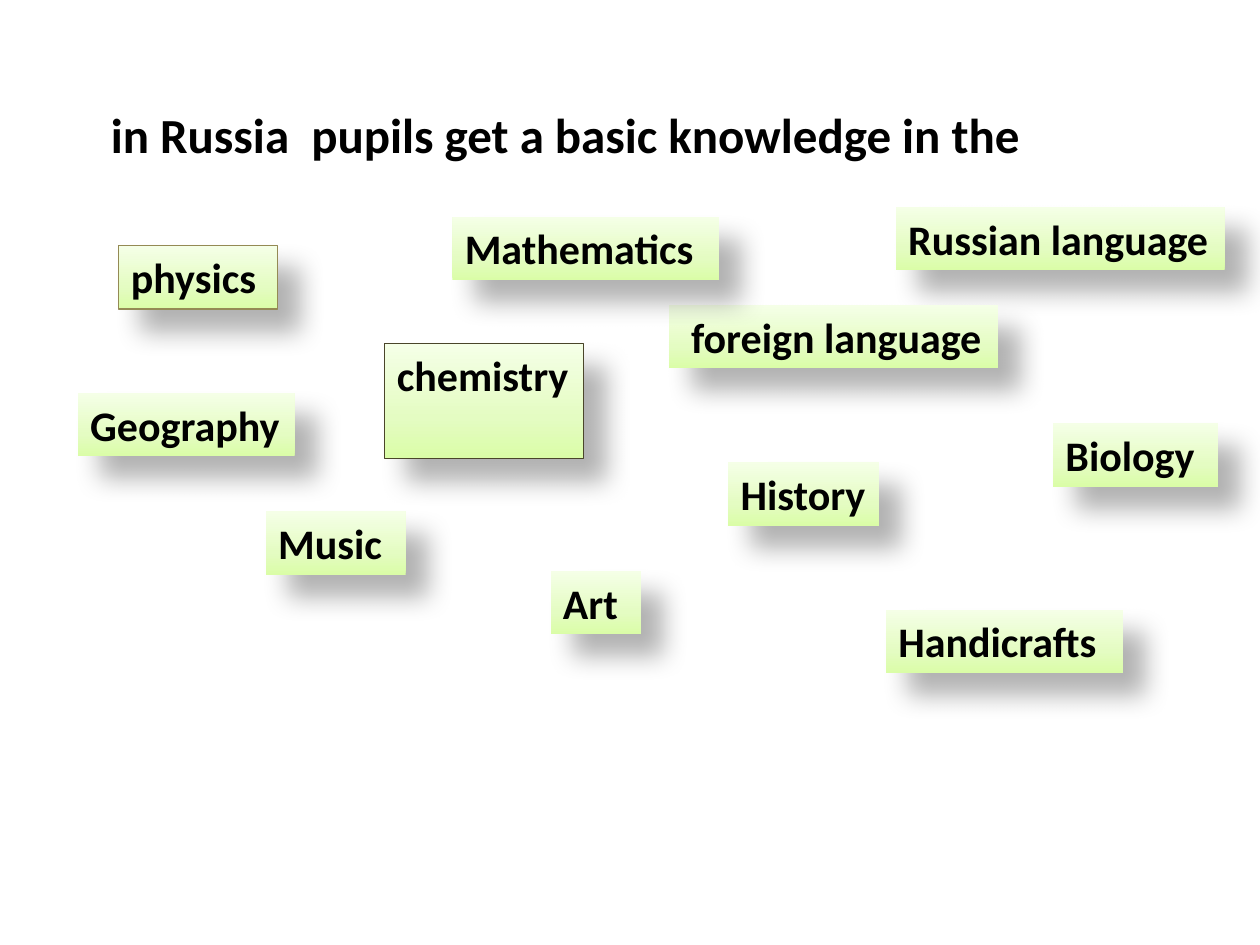
from lxml.etree import SubElement
from pptx import Presentation
from pptx.dml.color import RGBColor
from pptx.enum.shapes import MSO_SHAPE
from pptx.enum.text import MSO_ANCHOR, PP_ALIGN
from pptx.oxml.ns import qn
from pptx.util import Cm, Pt

COLORS = {
    "text": "000000",
    "shadow": "000000",
    "card_bottom": "DAFDA7",
    "card_middle": "E4FCC2",
    "card_top": "F5FFE7",
    "physics_line": "948A54",
    "chemistry_line": "4A452A",
}
CARD_HEIGHT = 1.28


class SubjectSlide:
    font = "Calibri"
    gradient = ((0, "card_bottom"), (35, "card_middle"), (100, "card_top"))

    def __init__(self, presentation):
        self.slide = presentation.slides.add_slide(presentation.slide_layouts[5])

    def add_text(self, frame, runs):
        frame.word_wrap = True
        frame.vertical_anchor = MSO_ANCHOR.TOP
        paragraph = frame.paragraphs[0]
        paragraph.alignment = PP_ALIGN.LEFT
        for text, size in runs:
            run = paragraph.add_run()
            run.text = text
            run.font.name = self.font
            run.font.size = Pt(size)
            run.font.bold = True
            run.font.color.rgb = RGBColor.from_string(COLORS["text"])

    def title(self, text, left, top, width, height):
        heading = self.slide.shapes.title
        heading.left, heading.top = Cm(left), Cm(top)
        heading.width, heading.height = Cm(width), Cm(height)
        self.add_text(heading.text_frame, [(text, 28)])

    def card(self, runs, left, top, width, height=CARD_HEIGHT, line=None):
        card = self.slide.shapes.add_shape(
            MSO_SHAPE.RECTANGLE, Cm(left), Cm(top), Cm(width), Cm(height))
        self.fill(card)
        if line:
            card.line.color.rgb = RGBColor.from_string(COLORS[line])
            card.line.width = Pt(0.75)
        else:
            card.line.fill.background()
        self.drop_shadow(card)
        # Room on the right keeps each subject on one line
        card.text_frame.margin_right = 0
        self.add_text(card.text_frame, runs)

    def fill(self, card):
        card.fill.gradient()
        card.fill.gradient_angle = 90
        stops = card._element.spPr.find(qn("a:gradFill")).find(qn("a:gsLst"))
        for stop in list(stops):
            stops.remove(stop)
        for position, color in self.gradient:
            stop = SubElement(stops, qn("a:gs"), pos=str(position * 1000))
            SubElement(stop, qn("a:srgbClr"), val=COLORS[color])

    def drop_shadow(self, card):
        card.shadow.inherit = False
        effects = card._element.spPr.find(qn("a:effectLst"))
        shadow = SubElement(
            effects, qn("a:outerShdw"), blurRad=str(Pt(15)), dist=str(Pt(18)),
            dir=str(45 * 60000), algn="tl", rotWithShape="0")
        color = SubElement(shadow, qn("a:srgbClr"), val=COLORS["shadow"])
        SubElement(color, qn("a:alpha"), val="30000")


def main():
    presentation = Presentation()
    presentation.slide_width, presentation.slide_height = Cm(25.4), Cm(19.05)
    page = SubjectSlide(presentation)

    # Heading
    page.title("in Russia  pupils get a basic knowledge in the", 1.98, 1.98, 21.44, 1.45)

    # School subjects: left, top and width of each card
    page.card([("Russian language", 24)], 18.06, 4.17, 6.63)
    page.card([(" foreign language", 24)], 13.49, 6.15, 6.63)
    page.card([("Mathematics", 24)], 9.12, 4.37, 5.38)
    page.card([("physics", 24), (" ", 18)], 2.39, 4.95, 3.2, line="physics_line")
    page.card([("chemistry", 24)], 7.75, 6.93, 4.01, 2.31, line="chemistry_line")
    for subject, left, top, width in (
        ("History", 14.68, 9.32, 3.05),
        ("Geography", 1.57, 7.92, 4.37),
        ("Biology", 21.23, 8.53, 3.33),
        ("Music", 5.36, 10.31, 2.82),
        ("Art", 11.1, 11.51, 1.83),
        ("Handicrafts", 17.86, 12.29, 4.78),
    ):
        page.card([(subject, 24)], left, top, width)

    presentation.save("out.pptx")


if __name__ == "__main__":
    main()
